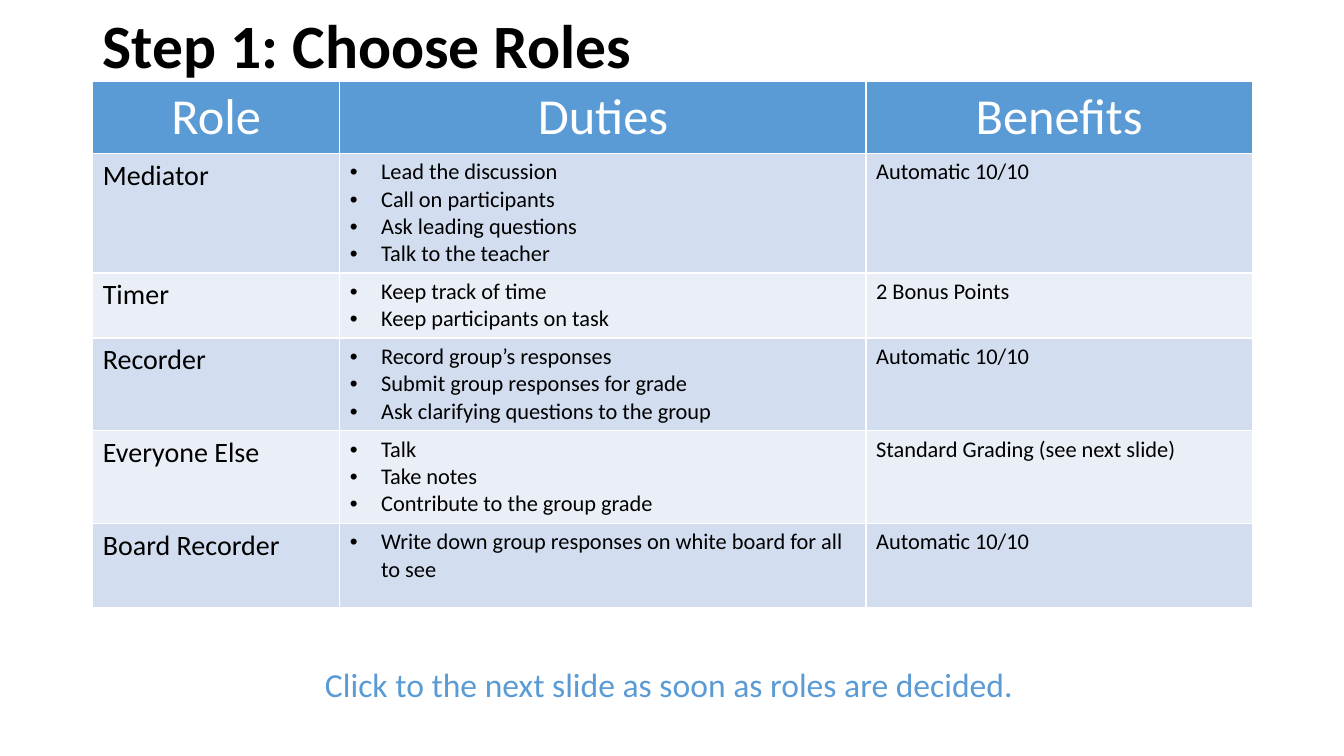
from dataclasses import dataclass

from lxml.etree import SubElement
from pptx import Presentation
from pptx.dml.color import RGBColor
from pptx.enum.text import MSO_ANCHOR, MSO_AUTO_SIZE, PP_ALIGN
from pptx.oxml.ns import qn
from pptx.slide import Slide
from pptx.table import Table, _Cell as Cell
from pptx.text.text import _Paragraph as Paragraph
from pptx.util import Inches, Pt

FONT = "Calibri"
BLACK = RGBColor(0x00, 0x00, 0x00)
WHITE = RGBColor(0xFF, 0xFF, 0xFF)
BLUE = RGBColor(0x5B, 0x9B, 0xD5)
BAND_FILLS = (RGBColor(0xD2, 0xDE, 0xEF), RGBColor(0xEA, 0xEF, 0xF7))

LEFT, WIDTH = 0.92, 11.5
COLUMN_WIDTHS = (2.45, 5.22, 3.83)
HEADINGS = ("Role", "Duties", "Benefits")
HEADER_HEIGHT = 0.71
BULLET_INDENT = Inches(0.31)


@dataclass(frozen=True)
class Role:
    name: str
    duties: tuple[str, ...]
    benefit: str
    height: float


ROLES = (
    Role("Mediator",
         ("Lead the discussion", "Call on participants",
          "Ask leading questions", "Talk to the teacher"),
         "Automatic 10/10", 1.18),
    Role("Timer", ("Keep track of time", "Keep participants on task"),
         "2 Bonus Points", 0.64),
    Role("Recorder",
         ("Record group’s responses", "Submit group responses for grade",
          "Ask clarifying questions to the group"),
         "Automatic 10/10", 0.92),
    Role("Everyone Else",
         ("Talk", "Take notes", "Contribute to the group grade"),
         "Standard Grading (see next slide)", 0.92),
    Role("Board Recorder",
         ("Write down group responses on white board for all to see",),
         "Automatic 10/10", 0.84),
)


def add_run(paragraph: Paragraph, text: str, size: int,
            color: RGBColor = BLACK, bold: bool = False) -> None:
    run = paragraph.add_run()
    run.text = text
    run.font.name = FONT
    run.font.size = Pt(size)
    run.font.bold = bold
    run.font.color.rgb = color


def add_bullet(paragraph: Paragraph) -> None:
    properties = paragraph._p.get_or_add_pPr()
    properties.set("marL", str(BULLET_INDENT))
    properties.set("indent", str(-BULLET_INDENT))
    SubElement(properties, qn("a:buFont")).set("typeface", "Arial")
    SubElement(properties, qn("a:buChar")).set("char", "•")


def fill_cell(cell: Cell, color: RGBColor) -> Paragraph:
    """Colour the cell and return its first paragraph."""
    cell.fill.solid()
    cell.fill.fore_color.rgb = color
    return cell.text_frame.paragraphs[0]


def fill_header(table: Table) -> None:
    table.rows[0].height = Inches(HEADER_HEIGHT)
    for cell, heading in zip(table.rows[0].cells, HEADINGS):
        paragraph = fill_cell(cell, BLUE)
        paragraph.alignment = PP_ALIGN.CENTER
        add_run(paragraph, heading, 36, WHITE)


def fill_role(table: Table, index: int, role: Role) -> None:
    row = table.rows[index]
    row.height = Inches(role.height)
    name, duties, benefit = (
        (cell, fill_cell(cell, BAND_FILLS[(index - 1) % 2]))
        for cell in row.cells)
    add_run(name[1], role.name, 20)
    add_run(benefit[1], role.benefit, 16)
    duties_cell, paragraph = duties
    for number, duty in enumerate(role.duties):
        if number:
            paragraph = duties_cell.text_frame.add_paragraph()
        add_bullet(paragraph)
        add_run(paragraph, duty, 16)


def add_title(slide: Slide) -> None:
    title = slide.shapes.title
    title.left, title.top = Inches(LEFT), Inches(-0.24)
    title.width, title.height = Inches(WIDTH), Inches(1.45)
    frame = title.text_frame
    frame.auto_size = MSO_AUTO_SIZE.NONE
    frame.vertical_anchor = MSO_ANCHOR.MIDDLE
    paragraph = frame.paragraphs[0]
    paragraph.alignment = PP_ALIGN.LEFT
    paragraph.line_spacing = 0.9
    add_run(paragraph, "Step 1: Choose Roles", 44, bold=True)


def add_roles_table(slide: Slide) -> None:
    height = HEADER_HEIGHT + sum(role.height for role in ROLES)
    table = slide.shapes.add_table(
        len(ROLES) + 1, len(HEADINGS),
        Inches(LEFT), Inches(0.81), Inches(WIDTH), Inches(height)).table
    for column, width in zip(table.columns, COLUMN_WIDTHS):
        column.width = Inches(width)
    fill_header(table)
    for index, role in enumerate(ROLES, start=1):
        fill_role(table, index, role)


def add_instruction(slide: Slide) -> None:
    box = slide.shapes.add_textbox(
        Inches(0.4), Inches(6.54), Inches(12.47), Inches(0.5))
    frame = box.text_frame
    frame.word_wrap = True
    frame.auto_size = MSO_AUTO_SIZE.SHAPE_TO_FIT_TEXT
    paragraph = frame.paragraphs[0]
    paragraph.alignment = PP_ALIGN.CENTER
    add_run(paragraph, "Click to the next slide as soon as roles are decided.",
            24, BLUE)


def main() -> None:
    presentation = Presentation()
    presentation.slide_width = Inches(13.33)
    presentation.slide_height = Inches(7.5)
    title_only = presentation.slide_layouts.get_by_name("Title Only")
    slide = presentation.slides.add_slide(title_only)
    add_title(slide)
    add_roles_table(slide)
    add_instruction(slide)
    presentation.save("out.pptx")


if __name__ == "__main__":
    main()
